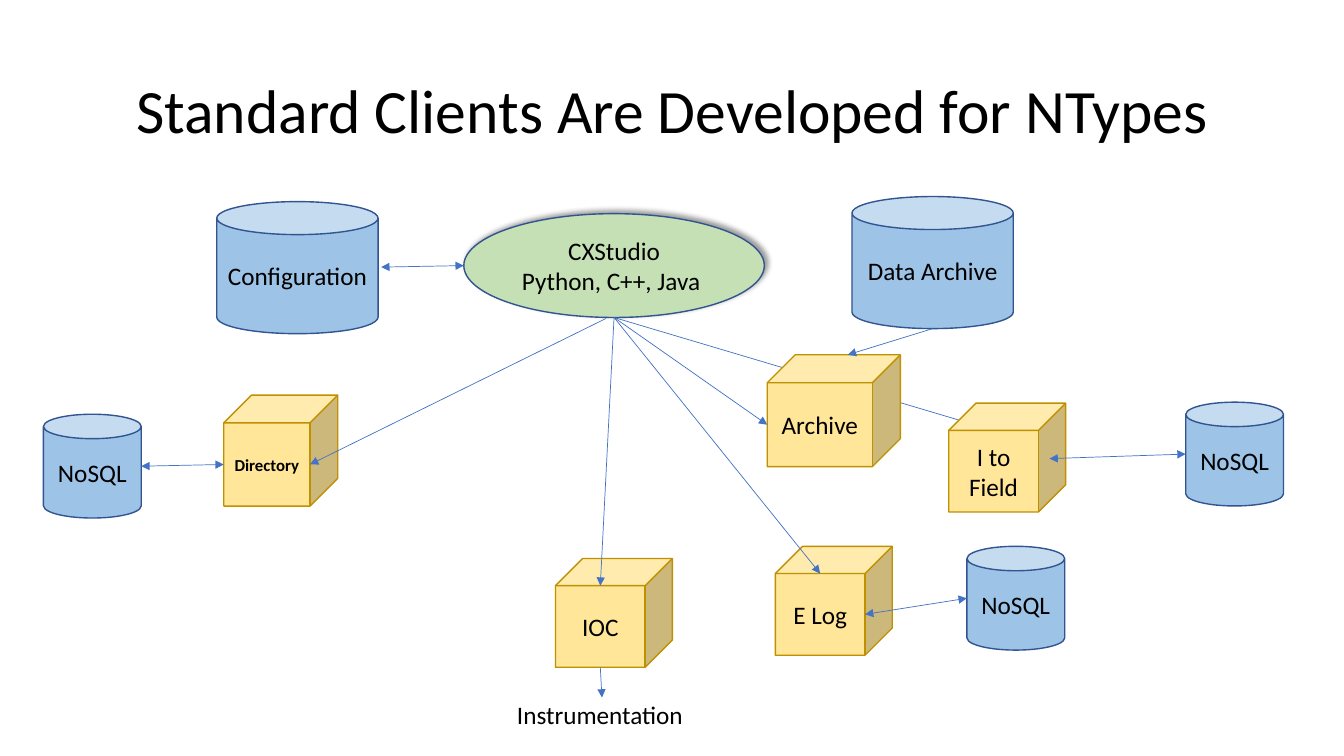
"""Build the slide that links standard clients to their services and stores."""
from dataclasses import dataclass
from typing import Any, NamedTuple

from lxml.etree import SubElement as Sub
from pptx import Presentation as Deck
from pptx.dml.color import RGBColor as Rgb
from pptx.enum.shapes import MSO_CONNECTOR as Wire, MSO_SHAPE as Kind
from pptx.enum.text import MSO_ANCHOR as Anchor, MSO_AUTO_SIZE as Fit, PP_ALIGN as Align
from pptx.oxml.ns import qn
from pptx.util import Inches, Pt


@dataclass(frozen=True)
class Theme:
    """Colours, font and sizes of the slide."""
    font: str = "Calibri"
    ink: str = "000000"
    wire: str = "4472C4"
    head: float = 44
    body: float = 18
    small: float = 12
    edge: float = 1
    thin: float = 0.5


class Look(NamedTuple):
    """Preset shape with its fill and line colours."""
    kind: Any
    fill: str
    line: str


class Box(NamedTuple):
    """Place and size in percent of the slide."""
    x: float
    y: float
    w: float
    h: float


class Spot(NamedTuple):
    """Point in percent of the slide."""
    x: float
    y: float


class Port(NamedTuple):
    """Named side of a node."""
    node: str
    side: str


@dataclass(frozen=True)
class Node:
    """Labelled shape of the diagram."""
    text: str
    look: Look
    box: Box
    size: float
    bold: bool = False


@dataclass(frozen=True)
class Link:
    """Arrow between two ends."""
    start: Port | Spot
    end: Port | Spot
    both: bool = False


THEME = Theme()
WIDE, HIGH = Inches(13.33), Inches(7.5)
CUBE = Look(Kind.CUBE, "FFE699", "BF9000")
CAN = Look(Kind.CAN, "9DC3E6", "325491")
OVAL = Look(Kind.OVAL, "C5E0B4", "325491")
BODY = THEME.body
BLOCK, STORE, DRUM = (8.7, 14.4), (7.28, 13.73), (12, 17.47)
NODES = {
    "ioc": Node("IOC", CUBE, Box(41.33, 73.87, *BLOCK), BODY),
    "folder": Node("Directory", CUBE, Box(16.65, 52.27, 8.48, 14.67), THEME.small, True),
    "field": Node("I to Field", CUBE, Box(70.59, 53.33, *BLOCK), BODY),
    "west": Node("NoSQL", CAN, Box(3.23, 54.8, *STORE), BODY),
    "east": Node("NoSQL", CAN, Box(88.22, 53.2, *STORE), BODY),
    "hub": Node("CXStudio\nPython, C++, Java ", OVAL, Box(34.51, 28.27, 22.36, 13.73), BODY),
    "config": Node("Configuration", CAN, Box(16.13, 26.67, *DRUM), BODY),
    "data": Node("Data Archive", CAN, Box(63.39, 26, *DRUM), BODY),
    "archive": Node("Archive", CUBE, Box(57.09, 46.93, 9.9, 14.8), BODY),
    "log": Node("E Log", CUBE, Box(57.69, 72.27, *BLOCK), BODY),
    "south": Node("NoSQL", CAN, Box(71.94, 72.27, *STORE), BODY),
}
HUB = Port("hub", "bottom")
BACK = Link(HUB, Port("field", "front"))
LINKS = [
    Link(Spot(78.09, 60.67), Port("east", "left"), True),
    Link(Port("ioc", "bottom"), Spot(44.79, 92.27)),
    Link(Port("west", "right"), Port("folder", "left"), True),
    Link(Spot(28.36, 35.33), Port("hub", "left"), True),
    Link(Spot(45.09, 42.13), Port("folder", "right")),
    Link(Port("data", "bottom"), Port("archive", "top")),
    Link(Port("log", "right"), Port("south", "left"), True),
    Link(HUB, Port("ioc", "front")),
    Link(HUB, Port("archive", "left")),
    Link(HUB, Port("log", "front")),
]


def place(x: float, y: float) -> tuple[int, int]:
    """Turn percent of the slide into lengths."""
    return int(WIDE * x / 100), int(HIGH * y / 100)


def frame(box: Box) -> tuple[int, int, int, int]:
    """Turn a box into left, top, width and height."""
    return *place(box.x, box.y), *place(box.w, box.h)


def assign(item: Any, style: dict[str, Any]) -> None:
    """Set every format value on an object."""
    for name, value in style.items():
        setattr(item, name, value)


def locate(end: Port | Spot) -> tuple[int, int]:
    """Find an end, with a cube's depth a quarter of its short side."""
    if isinstance(end, Spot):
        return place(end.x, end.y)
    node = NODES[end.node]
    x, y, w, h = frame(node.box)
    deep = min(w, h) // 4 if node.look is CUBE else 0
    dx, dy = {
        "left": (0, (h + deep) // 2),
        "right": (w - deep, (h + deep) // 2),
        "top": ((w + deep) // 2, 0),
        "front": ((w - deep) // 2, deep),
        "bottom": ((w - deep) // 2, h),
    }[end.side]
    return x + dx, y + dy


def write(shape: Any, text: str, size: float, style: dict[str, Any],
          align: Any = Align.CENTER, bold: bool = False, pitch: float = 1) -> None:
    """Fill a shape with styled text."""
    body = shape.text_frame
    body.text = text
    assign(body, style)
    for para in body.paragraphs:
        assign(para, {"alignment": align, "line_spacing": pitch})
        for run in para.runs:
            assign(run.font, {"name": THEME.font, "size": Pt(size), "bold": bold})
            run.font.color.rgb = Rgb.from_string(THEME.ink)


def shade(shape: Any) -> None:
    """Cast a soft shadow up and to the right."""
    effect = shape.element.spPr.find(qn("a:effectLst"))
    cast = Sub(effect, qn("a:outerShdw"), blurRad=str(Pt(4)), dist=str(Pt(3)),
               dir=str(315 * 60000), algn="bl", rotWithShape="0")
    tint = Sub(cast, qn("a:srgbClr"), val=THEME.ink)
    Sub(tint, qn("a:alpha"), val="40000")


def draw(slide: Any, node: Node) -> None:
    """Draw one node with its label."""
    shape = slide.shapes.add_shape(node.look.kind, *frame(node.box))
    shape.fill.solid()
    shape.fill.fore_color.rgb = Rgb.from_string(node.look.fill)
    shape.line.color.rgb = Rgb.from_string(node.look.line)
    shape.line.width = Pt(THEME.edge)
    shape.shadow.inherit = False
    if node.look is OVAL:
        shade(shape)
    write(shape, node.text, node.size,
          {"word_wrap": True, "vertical_anchor": Anchor.MIDDLE}, bold=node.bold)


def join(slide: Any, link: Link) -> None:
    """Draw one arrow."""
    wire = slide.shapes.add_connector(Wire.STRAIGHT, *locate(link.start), *locate(link.end))
    wire.line.color.rgb = Rgb.from_string(THEME.wire)
    wire.line.width = Pt(THEME.thin)
    form = wire.element.spPr
    for tag in ("a:headEnd", "a:tailEnd") if link.both else ("a:tailEnd",):
        Sub(form.find(qn("a:ln")), qn(tag), type="triangle")
    Sub(form, qn("a:effectLst"))


def main() -> None:
    """Build and save the deck."""
    deck = Deck()
    assign(deck, {"slide_width": WIDE, "slide_height": HIGH})
    slide = deck.slides.add_slide(deck.slide_layouts[6])
    join(slide, BACK)
    title = slide.shapes.add_textbox(*frame(Box(6.9, 5.33, 86.27, 19.33)))
    write(title, "Standard Clients Are Developed for NTypes", THEME.head,
          {"word_wrap": True, "vertical_anchor": Anchor.MIDDLE}, pitch=0.9)
    for node in NODES.values():
        draw(slide, node)
    label = slide.shapes.add_textbox(*frame(Box(37.73, 91.87, 14.03, 5.33)))
    write(label, "Instrumentation", BODY,
          {"word_wrap": False, "auto_size": Fit.SHAPE_TO_FIT_TEXT}, Align.LEFT)
    for link in LINKS:
        join(slide, link)
    deck.save("out.pptx")


if __name__ == "__main__":
    main()
